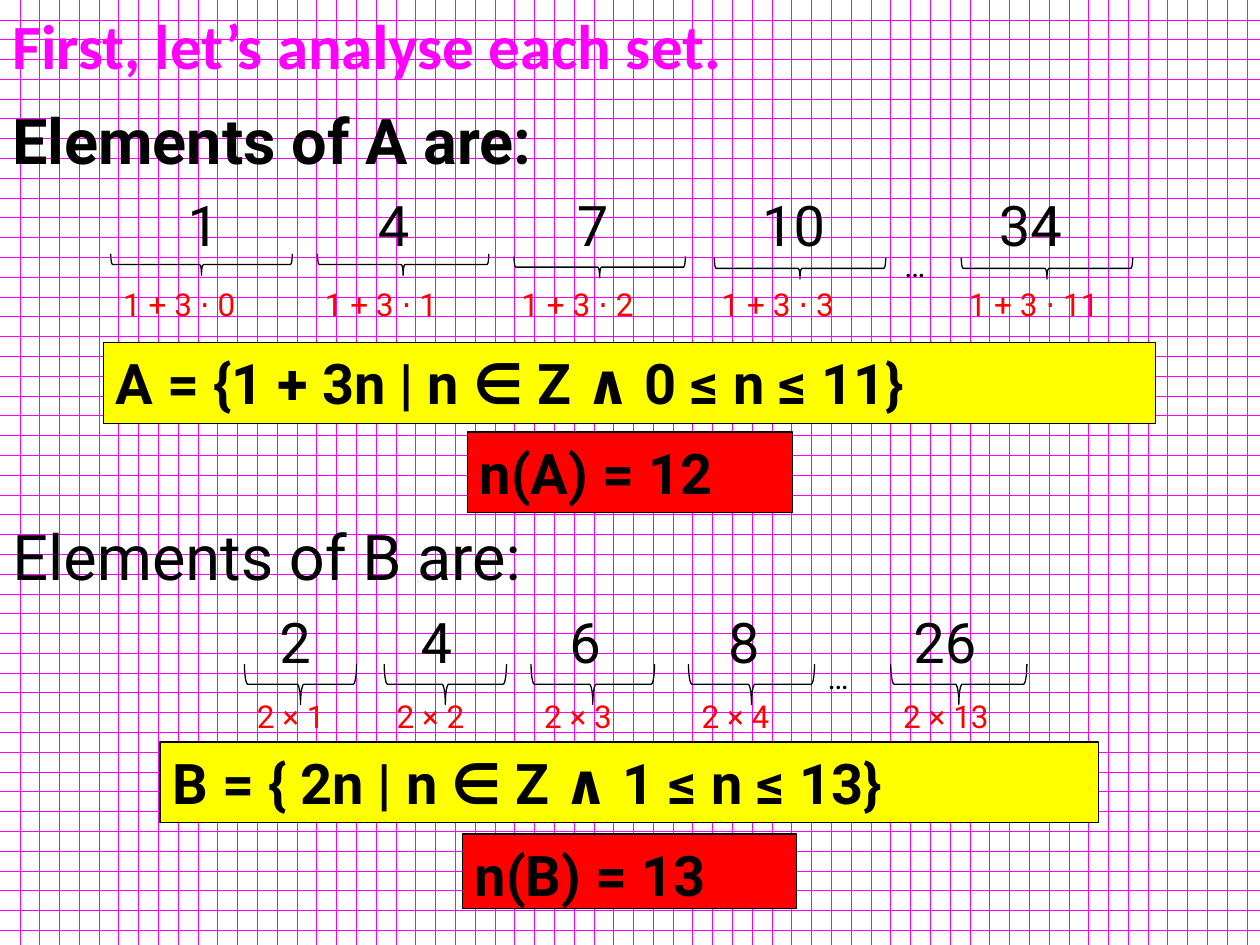
from lxml import etree
from pptx import Presentation
from pptx.dml.color import RGBColor
from pptx.enum.dml import MSO_PATTERN
from pptx.enum.shapes import MSO_SHAPE
from pptx.enum.text import MSO_ANCHOR, MSO_AUTO_SIZE, PP_ALIGN
from pptx.oxml import parse_xml
from pptx.util import Inches, Pt

BRACE, RECT = MSO_SHAPE.LEFT_BRACE, MSO_SHAPE.RECTANGLE
DOT_GRID = MSO_PATTERN.DOTTED_GRID
GROW = MSO_AUTO_SIZE.SHAPE_TO_FIT_TEXT
TOP, LEFT = MSO_ANCHOR.TOP, PP_ALIGN.LEFT
COLUMNS, ROWS = 100, 75
UNIT = Inches(10) / COLUMNS
A_NS = "http://schemas.openxmlformats.org/drawingml/2006/main"

BLACK, RED, YELLOW, MAGENTA, WHITE = "000000", "FF0000", "FFFF00", "FF00FF", "FFFFFF"
HEADING = dict(size=Pt(36), name="Roboto", bold=False)
HEADING_BOLD = dict(HEADING, bold=True)
TITLE = dict(HEADING_BOLD, name="Calibri")
NUMBER = dict(size=Pt(32), name="Roboto", bold=False)
RESULT = dict(NUMBER, bold=True)
LABEL = dict(NUMBER, size=Pt(18))

# Each term: number, its left and width, cell left and width,
# brace width and middle row, factor text (columns and rows of the section).
SET_A = dict(
    heading="Elements of A are:", heading_width=56.3, heading_format=HEADING_BOLD,
    number_row=7, label_row=14.5, brace_height=1.7,
    terms=[
        ("1", 13.9, 4.3, 8.8, 14.4, 14.4, 13.4, "1 + 3 ⋅ 0"),
        ("4", 29, 5.9, 24.8, 14.4, 13.6, 13.4, "1 + 3 ⋅ 1"),
        ("7", 44.8, 5.5, 40.4, 14.4, 13.6, 13.6, "1 + 3 ⋅ 2"),
        ("10", 59.5, 8, 56.3, 14.4, 13.6, 13.7, "1 + 3 ⋅ 3"),
        ("34", 78.3, 9.6, 75.9, 14.4, 13.6, 13.7, "1 + 3 ⋅ 11"),
    ],
    dots=(70.8, 11.4),
    rule=("A = {1 + 3n | n ∈ Z ∧ 0 ≤ n ≤ 11}", (8.2, 19.6, 83.5, 6.4)),
    count=("n(A) = 12", (37.1, 26.7, 25.8, 6.4)),
)
SET_B = dict(
    heading="Elements of B are:", heading_width=55.9, heading_format=HEADING,
    number_row=7.1, label_row=14.2, brace_height=3.2,
    terms=[
        ("2", 21.2, 5.4, 19.4, 8.9, 8.9, 13.7, "2 × 1"),
        ("4", 32.4, 5.9, 30.5, 9.7, 9.7, 13.7, "2 × 2"),
        ("6", 44.2, 5.8, 42.2, 9.7, 9.8, 13.7, "2 × 3"),
        ("8", 56.8, 5.8, 54.7, 9.9, 10, 13.7, "2 × 4"),
        ("26", 71.5, 9.2, 70.7, 10.8, 10.8, 13.7, "2 × 13"),
    ],
    dots=(64.7, 11.1),
    rule=("B = { 2n | n ∈ Z ∧ 1 ≤ n ≤ 13}", (12.7, 18.3, 74.5, 6.4)),
    count=("n(B) = 13", (36.7, 25.6, 26.5, 5.9)),
)


def rgb(value):
    return RGBColor.from_string(value)


def emu(box):
    return [round(v * UNIT) for v in box]


def write(sp, text, fmt, color=BLACK, wrap=True):
    tf = sp.text_frame
    for key, value in dict(word_wrap=wrap, auto_size=GROW, vertical_anchor=TOP).items():
        setattr(tf, key, value)
    p = tf.paragraphs[0]
    p.alignment = LEFT
    r = p.add_run()
    r.text = text
    for key, value in fmt.items():
        setattr(r.font, key, value)
    r.font.color.rgb = rgb(color)
    return r


def add_text(s, box, text, fmt, color=BLACK, wrap=False):
    return write(s.shapes.add_textbox(*emu(box)), text, fmt, color, wrap)


def add_outlined(s, kind, box, fill=None):
    sp = s.shapes.add_shape(kind, *emu(box))
    sp.shadow.inherit = False
    if fill:
        sp.fill.solid()
        sp.fill.fore_color.rgb = rgb(fill)
    else:
        sp.fill.background()
    sp.line.color.rgb = rgb(BLACK)
    sp.line.width = Pt(0.75)
    return sp


def outline_text(r, color, width):
    ln = parse_xml(f'<a:ln xmlns:a="{A_NS}" w="{width}"/>')
    fill = etree.SubElement(ln, f"{{{A_NS}}}solidFill")
    etree.SubElement(fill, f"{{{A_NS}}}srgbClr", val=color)
    r.font._element.insert(0, ln)


def add_term(s, left, top, section, term):
    """Number above, brace below it, factor text under the brace."""
    number, num_left, num_width, cell, cell_width, brace_width, middle, label = term
    add_text(s, (left + num_left, top + section["number_row"], num_width, 6.4), number, NUMBER)
    thick = section["brace_height"]
    center = left + cell + cell_width / 2
    brace = add_outlined(s, BRACE, (center - thick / 2, top + middle - brace_width / 2,
                                    thick, brace_width))
    brace.rotation = 270
    add_text(s, (left + cell, top + section["label_row"], cell_width, 4), label, LABEL, RED, True)


def add_set(s, left, top, section):
    add_text(s, (left, top, section["heading_width"], 7.1),
             section["heading"], section["heading_format"])
    for part, fill in (("rule", YELLOW), ("count", RED)):
        text, (x, y, w, h) = section[part]
        write(add_outlined(s, RECT, (left + x, top + y, w, h), fill), text, RESULT)
    for term in section["terms"]:
        add_term(s, left, top, section, term)
    x, y = section["dots"]
    add_text(s, (left + x, top + y, 5.1, 4), "…", LABEL)


def add_background(s):
    fill = s.background.fill
    fill.patterned()
    fill.pattern = DOT_GRID
    fill.fore_color.rgb = rgb(MAGENTA)
    fill.back_color.rgb = rgb(WHITE)


def main():
    prs = Presentation()
    prs.slide_width, prs.slide_height = emu((COLUMNS, ROWS))
    s = prs.slides.add_slide(prs.slide_layouts[6])
    add_background(s)
    title = add_text(s, (0, 0, COLUMNS, 7.1), "First, let’s analyse each set.", TITLE, MAGENTA, True)
    outline_text(title, BLACK, Pt(0.75))
    add_set(s, 0, 7.6, SET_A)
    add_set(s, 0, 40.6, SET_B)
    prs.save("out.pptx")


if __name__ == "__main__":
    main()
